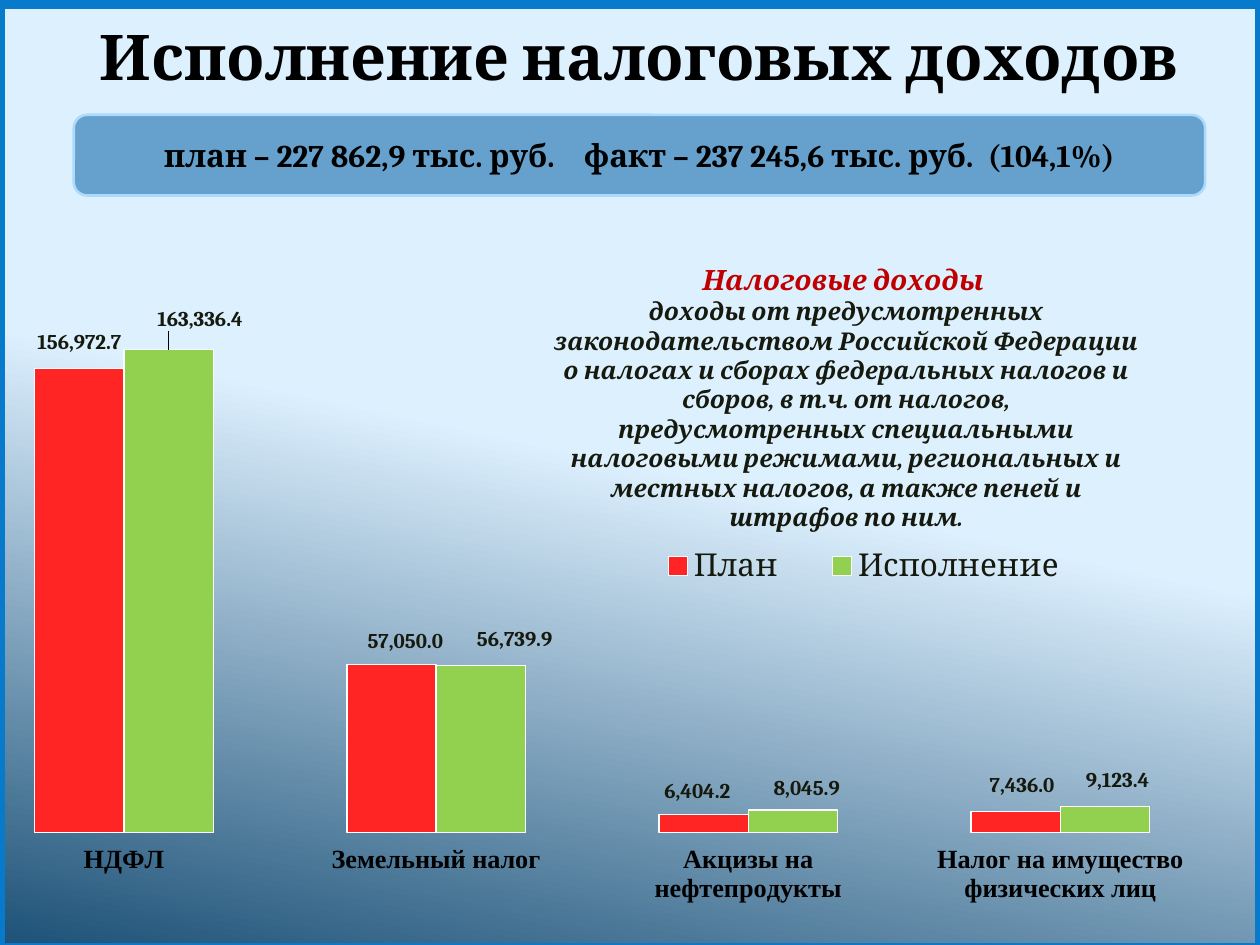
import pptx
import pptx.chart.data
import pptx.dml.color
import pptx.enum.chart
import pptx.enum.shapes
import pptx.enum.text
import pptx.oxml
import pptx.oxml.ns
import pptx.util

RGB = pptx.dml.color.RGBColor
BLACK = RGB(0x00, 0x00, 0x00)
WHITE = RGB(0xFF, 0xFF, 0xFF)
INK = RGB(0x16, 0x19, 0x0D)
CRIMSON = RGB(0xC0, 0x00, 0x00)
PLAN_RED = RGB(0xFF, 0x25, 0x25)
FACT_GREEN = RGB(0x92, 0xD0, 0x50)
BANNER_BLUE = RGB(0x65, 0xA1, 0xCC)
BANNER_EDGE = RGB(0xAB, 0xDA, 0xFC)
FRAME_BLUE = RGB(0x07, 0x7A, 0xCC)
SKY = RGB(0xDD, 0xF0, 0xFE)
DEEP_BLUE = RGB(0x1E, 0x52, 0x78)

SLIDE_W, SLIDE_H = pptx.util.Inches(10), pptx.util.Inches(7.5)
SERIF = "Cambria"
NUMBER_FORMAT = "#,##0.0"

CATEGORIES = ["НДФЛ", "Земельный налог", "Акцизы на нефтепродукты",
              "Налог на имущество физических лиц"]
# Series: name, colour, values, label shifts in percent of the chart's size
SERIES = [
    ("План", PLAN_RED, [156972.7, 57050.0, 6404.2, 7436.0],
     [(0, -1.2), (1.1, -0.8), (-0.5, -0.8), (0.5, -1.2)]),
    ("Исполнение", FACT_GREEN, [163336.4, 56739.9, 8045.9, 9123.4],
     [(2.5, -1.8), (2.7, -1.2), (1.1, -0.5), (1, -1.2)]),
]


def share(left, top, width, height):
    """Turn percentages of the slide into a box."""
    return tuple(int(size * part / 100) for size, part in
                 zip((SLIDE_W, SLIDE_H) * 2, (left, top, width, height)))


def set_font(font, size, color, name=SERIF, bold=False, italic=False):
    font.name, font.size = name, pptx.util.Pt(size)
    font.bold, font.italic = bold, italic
    font.color.rgb = color


def write(paragraph, text, spacing=0, **style):
    """Add a run; spacing widens each character, in points."""
    paragraph.alignment = pptx.enum.text.PP_ALIGN.CENTER
    run = paragraph.add_run()
    run.text = text
    set_font(run.font, **style)
    if spacing:
        run.font._element.set("spc", str(int(spacing * 100)))


def set_layout(parent, after, **parts):
    """Place a chart part by hand, in shares of the chart's size."""
    for old in parent.findall(pptx.oxml.ns.qn("c:layout")):
        parent.remove(old)
    values = "".join(f'<c:{tag} val="{value}"/>' for tag, value in parts.items())
    layout = pptx.oxml.parse_xml(
        f'<c:layout {pptx.oxml.ns.nsdecls("c")}>'
        f"<c:manualLayout>{values}</c:manualLayout></c:layout>")
    if after is None:
        parent.insert(0, layout)
    else:
        after.addnext(layout)


def paint_background(slide):
    fill = slide.background.fill
    fill.gradient()
    fill.gradient_angle = 258
    for stop, position, color in zip(fill.gradient_stops, (0.49, 1), (SKY, DEEP_BLUE)):
        stop.position = position
        stop.color.rgb = color


def place_title(slide, box):
    title = slide.shapes.title
    title.left, title.top, title.width, title.height = box
    frame = title.text_frame
    frame.auto_size = pptx.enum.text.MSO_AUTO_SIZE.NONE
    frame.vertical_anchor = pptx.enum.text.MSO_ANCHOR.MIDDLE
    frame.paragraphs[0].line_spacing = 0.9
    write(frame.paragraphs[0], "Исполнение налоговых доходов",
          size=36, color=BLACK, bold=True)


def place_totals(slide, box):
    banner = slide.shapes.add_shape(
        pptx.enum.shapes.MSO_SHAPE.ROUNDED_RECTANGLE, *box)
    banner.shadow.inherit = False
    banner.fill.solid()
    banner.fill.fore_color.rgb = BANNER_BLUE
    banner.line.color.rgb = BANNER_EDGE
    banner.line.width = pptx.util.Pt(1.5)
    banner.text_frame.vertical_anchor = pptx.enum.text.MSO_ANCHOR.MIDDLE
    for text, spacing in (("план – 227 862,9 тыс. руб.", 0), (" ", 12.4),
                          ("факт – 237 245,6 тыс. руб.", 0), (" ", 4.1),
                          ("(104,1%)", 0)):
        write(banner.text_frame.paragraphs[0], text, spacing=spacing,
              size=18, color=BLACK, bold=True)


def style_series(series, color, shifts):
    series.format.fill.solid()
    series.format.fill.fore_color.rgb = color
    series.format.line.color.rgb = WHITE
    series.format.line.width = pptx.util.Pt(0.75)
    labels = series.data_labels
    labels.show_value = True
    labels.number_format, labels.number_format_is_linked = NUMBER_FORMAT, False
    set_font(labels.font, 12, INK, bold=True)
    for index in range(len(shifts)):
        label = series.points[index].data_label
        set_font(label.font, 12, INK, bold=True)
        label.position = pptx.enum.chart.XL_LABEL_POSITION.OUTSIDE_END
    for element, (right, down) in zip(
            labels._element.findall(pptx.oxml.ns.qn("c:dLbl")), shifts):
        set_layout(element, element[0], x=right / 100, y=down / 100)
    # No leader lines between columns and labels
    for leader in labels._element.findall(pptx.oxml.ns.qn("c:showLeaderLines")):
        labels._element.remove(leader)
    labels._element.append(pptx.oxml.parse_xml(
        f'<c:extLst {pptx.oxml.ns.nsdecls("c")}>'
        '<c:ext uri="{CE6537A1-D6FC-4f65-9D91-7224C49458BB}" xmlns:c15='
        '"http://schemas.microsoft.com/office/drawing/2012/chart">'
        '<c15:showLeaderLines val="0"/></c:ext></c:extLst>'))


def place_chart(slide, box):
    data = pptx.chart.data.CategoryChartData(number_format=NUMBER_FORMAT)
    data.categories = CATEGORIES
    for name, color, values, shifts in SERIES:
        data.add_series(name, values)
    chart = slide.shapes.add_chart(
        pptx.enum.chart.XL_CHART_TYPE.COLUMN_CLUSTERED, *box, data).chart
    chart.has_title = False
    set_font(chart.font, 16.8, WHITE, name="Roboto Slab")

    # Columns and their labels
    plot = chart.plots[0]
    plot.vary_by_categories = False
    plot.gap_width, plot.overlap = 150, 0
    for series, (name, color, values, shifts) in zip(plot.series, SERIES):
        style_series(series, color, shifts)

    # Axes
    tax_axis, amount_axis = chart.category_axis, chart.value_axis
    tax_axis.format.line.fill.background()
    tax_axis.major_tick_mark = pptx.enum.chart.XL_TICK_MARK.CROSS
    set_font(tax_axis.tick_labels.font, 15, BLACK, name="Times New Roman", bold=True)
    amount_axis.minimum_scale, amount_axis.maximum_scale = 500, 180000
    amount_axis.has_major_gridlines = False
    amount_axis.visible = False

    # Legend and plot area
    chart.has_legend = True
    legend = chart.legend
    legend.position = pptx.enum.chart.XL_LEGEND_POSITION.RIGHT
    legend.include_in_layout = False
    set_font(legend.font, 18, INK)
    set_layout(legend._element, legend._element[0],
               xMode="edge", yMode="edge", x=0.53, y=0.49, w=0.38, h=0.06)
    set_layout(chart._chartSpace.chart.plotArea, None, layoutTarget="inner",
               xMode="edge", yMode="edge", x=0.009, y=0.17, w=0.991, h=0.7)


def place_definition(slide, box):
    frame = slide.shapes.add_textbox(*box).text_frame
    frame.word_wrap = True
    frame.auto_size = pptx.enum.text.MSO_AUTO_SIZE.SHAPE_TO_FIT_TEXT
    write(frame.paragraphs[0], "Налоговые доходы ",
          size=16, color=CRIMSON, bold=True, italic=True)
    definition = frame.add_paragraph()
    for text, spacing in (
            ("доходы от предусмотренных законодательством Российской Федерации "
             "о налогах и сборах федеральных налогов и сборов, в т.ч. от налогов,", 0),
            (" ", 4),
            ("предусмотренных специальными налоговыми режимами, региональных и "
             "местных налогов, а также пеней и штрафов по ним.", 0)):
        write(definition, text, spacing=spacing,
              size=14, color=INK, bold=True, italic=True)


def place_frame(slide, box):
    border = slide.shapes.add_shape(pptx.enum.shapes.MSO_SHAPE.RECTANGLE, *box)
    border.shadow.inherit = False
    border.fill.background()
    border.line.color.rgb = FRAME_BLUE
    border.line.width = pptx.util.Pt(6)


def main():
    deck = pptx.Presentation()
    deck.slide_width, deck.slide_height = SLIDE_W, SLIDE_H
    slide = deck.slides.add_slide(deck.slide_layouts[5])
    paint_background(slide)
    place_title(slide, share(3.9, 1.6, 93.7, 9.6))
    place_totals(slide, share(5.85, 12.15, 89.8, 8.53))
    place_chart(slide, share(-3.45, 18.13, 100, 80.4))
    place_definition(slide, share(42.95, 27.13, 48.4, 23.73))
    place_frame(slide, share(0, 0.4, 100, 100))
    deck.save("out.pptx")


if __name__ == "__main__":
    main()
